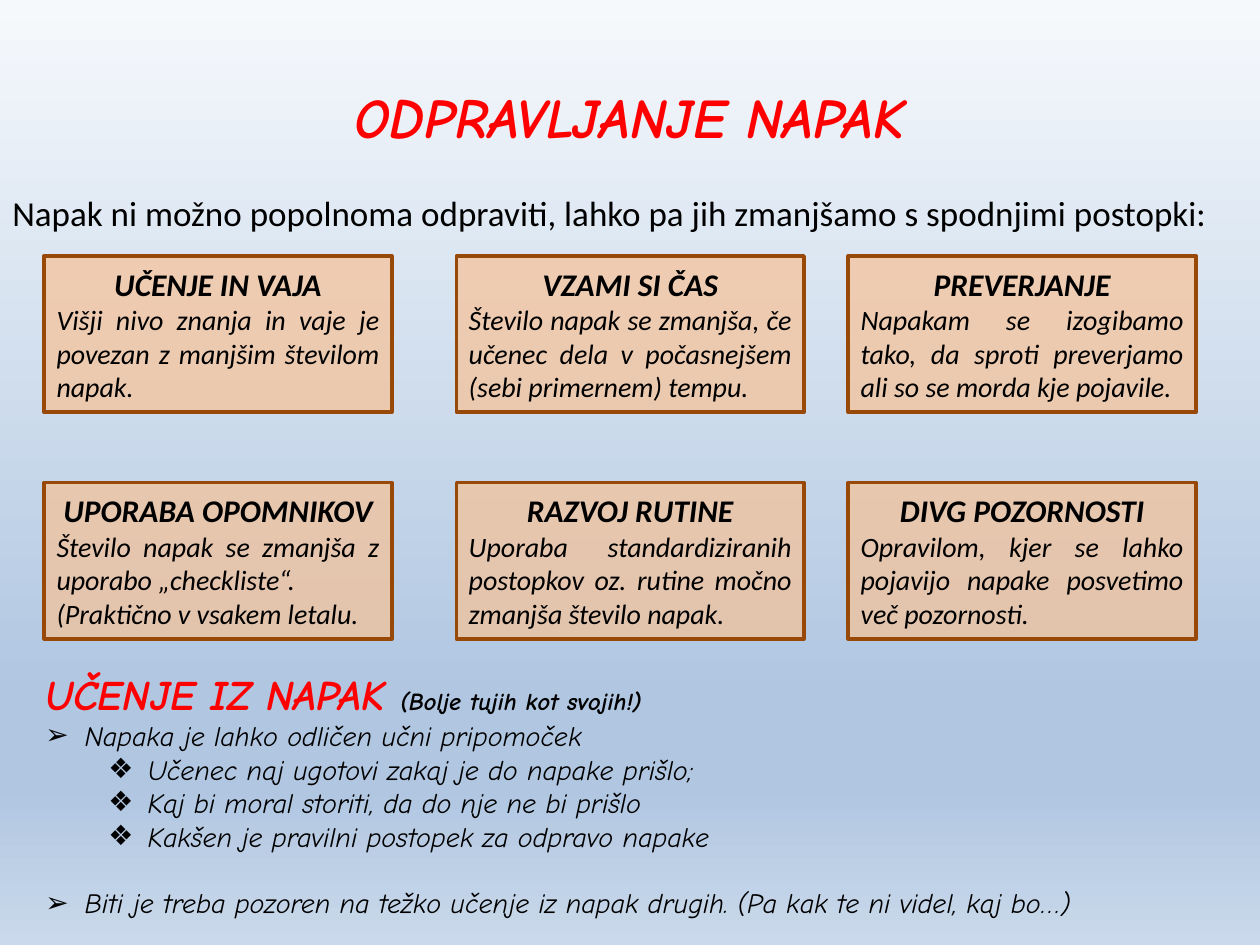
import pptx
import pptx.dml.color
import pptx.enum.shapes
import pptx.enum.text
import pptx.oxml
import pptx.oxml.ns
import pptx.util

Cm = pptx.util.Cm
Pt = pptx.util.Pt
qn = pptx.oxml.ns.qn
Align = pptx.enum.text.PP_ALIGN
Anchor = pptx.enum.text.MSO_ANCHOR

COLUMNS = [0.89, 9.2, 17.1]
ROWS = [5.16, 9.73]
METHODS = [
    ("UČENJE IN VAJA",
     ["Višji nivo znanja in vaje je povezan z manjšim številom napak."]),
    ("VZAMI SI ČAS",
     ["Število napak se zmanjša, če učenec dela v počasnejšem (sebi primernem) tempu."]),
    ("PREVERJANJE",
     ["Napakam se izogibamo tako, da sproti preverjamo ali so se morda kje pojavile."]),
    ("UPORABA OPOMNIKOV",
     ["Število napak se zmanjša z uporabo „checkliste“.",
      "(Praktično v vsakem letalu."]),
    ("RAZVOJ RUTINE",
     ["Uporaba standardiziranih postopkov oz. rutine močno zmanjša število napak."]),
    ("DIVG POZORNOSTI",
     ["Opravilom, kjer se lahko pojavijo napake posvetimo več pozornosti."]),
]
# Level, text, space before in points
LESSONS = [
    (0, "Napaka je lahko odličen učni pripomoček", 0),
    (1, "Učenec naj ugotovi zakaj je do napake prišlo;", 0),
    (1, "Kaj bi moral storiti, da do nje ne bi prišlo", 0),
    (1, "Kakšen je pravilni postopek za odpravo napake", 0),
    (0, "Biti je treba pozoren na težko učenje iz napak drugih. "
        "(Pa kak te ni videl, kaj bo…)", 19),
]


def color(text):
    return pptx.dml.color.RGBColor.from_string(text)


def add_child(parent, tag, **attributes):
    child = pptx.oxml.parse_xml(
        f'<{tag} xmlns:a="http://schemas.openxmlformats.org/drawingml/2006/main"/>')
    for name, value in attributes.items():
        child.set(name, str(value))
    parent.append(child)
    return child


class Painter:
    plain_font = "Calibri"
    hand_font = "Comic Neue"
    black, red = "000000", "FF0000"
    box_fill, box_line = "FAC090", "984807"
    bullets = ["➢", "❖"]
    indents = [0.79, 2.06]

    def __init__(self, page):
        self.page = page

    def background(self, stops):
        fill = self.page.background.fill
        fill.gradient()
        fill.gradient_angle = 270
        stop_list = self.page.element.find(".//" + qn("a:gsLst"))
        for stop in list(stop_list):
            stop_list.remove(stop)
        for position, value in stops:
            stop = add_child(stop_list, "a:gs", pos=position * 1000)
            add_child(stop, "a:srgbClr", val=value)

    def place(self, box, left, top, width, height):
        box.left, box.top = Cm(left), Cm(top)
        box.width, box.height = Cm(width), Cm(height)

    def span(self, para, text, size, font, ink=black, bold=False, italic=True):
        span = para.add_run()
        span.text = text
        span.font.name, span.font.size = font, Pt(size)
        span.font.bold, span.font.italic = bold, italic
        span.font.color.rgb = color(ink)

    def title(self, text):
        box = self.page.shapes.title
        self.place(box, 1.27, 0.76, 22.86, 3.18)
        box.text_frame.vertical_anchor = Anchor.MIDDLE
        para = box.text_frame.paragraphs[0]
        para.alignment = Align.CENTER
        self.span(para, text, 32, self.hand_font, self.red, bold=True)

    def intro(self, text):
        box = self.page.shapes.add_textbox(0, Cm(3.73), Cm(25.4), Cm(1.12))
        box.text_frame.word_wrap = True
        self.span(box.text_frame.paragraphs[0], text, 20, self.plain_font, italic=False)

    def card(self, left, top, heading, lines):
        box = self.page.shapes.add_shape(
            pptx.enum.shapes.MSO_SHAPE.RECTANGLE, Cm(left), Cm(top), Cm(7.01), Cm(3.15))
        box.shadow.inherit = False
        box.fill.solid()
        box.fill.fore_color.rgb = color(self.box_fill)
        fill_color = box.element.spPr.find(qn("a:solidFill")).find(qn("a:srgbClr"))
        add_child(fill_color, "a:alpha", val=66000)
        box.line.color.rgb = color(self.box_line)
        box.line.width = Pt(2)
        frame = box.text_frame
        frame.word_wrap = True
        frame.vertical_anchor = Anchor.MIDDLE
        para = frame.paragraphs[0]
        para.alignment = Align.CENTER
        self.span(para, heading, 18, self.plain_font, bold=True)
        for line in lines:
            para = frame.add_paragraph()
            para.alignment = Align.JUSTIFY
            self.span(para, line, 16, self.plain_font)

    def lessons(self, heading, remark, items):
        box = self.page.placeholders[1]
        self.place(box, 0.66, 13.34, 23.19, 5.38)
        frame = box.text_frame
        frame.auto_size = pptx.enum.text.MSO_AUTO_SIZE.NONE
        para = frame.paragraphs[0]
        self.list_format(para, 0, 0, None)
        self.span(para, heading, 24, self.hand_font, self.red, bold=True)
        self.span(para, remark, 14, self.hand_font, bold=True)
        for level, text, gap in items:
            para = frame.add_paragraph()
            para.level = level
            self.list_format(para, self.indents[level], gap, self.bullets[level])
            self.span(para, text, 16, self.hand_font)

    def list_format(self, para, indent, gap, bullet):
        para.space_before, para.space_after = Pt(gap), Pt(0)
        properties = para._p.get_or_add_pPr()
        properties.set("marL", str(Cm(indent)))
        properties.set("indent", str(-Cm(0.79) if bullet else 0))
        if bullet:
            add_child(properties, "a:buChar", char=bullet)
        else:
            add_child(properties, "a:buNone")


def main():
    deck = pptx.Presentation()
    deck.slide_width, deck.slide_height = Cm(25.4), Cm(19.05)
    painter = Painter(deck.slides.add_slide(deck.slide_layouts[1]))
    painter.background([(0, "F6F9FC"), (74, "B0C6E1"), (83, "B0C6E1"), (100, "CAD9EB")])
    painter.title("ODPRAVLJANJE NAPAK")
    painter.intro("Napak ni možno popolnoma odpraviti, lahko pa jih zmanjšamo "
                  "s spodnjimi postopki:")
    for index, (heading, lines) in enumerate(METHODS):
        row, column = divmod(index, len(COLUMNS))
        painter.card(COLUMNS[column], ROWS[row], heading, lines)
    painter.lessons("UČENJE IZ NAPAK ", "(Bolje tujih kot svojih!)", LESSONS)
    deck.save("out.pptx")


if __name__ == "__main__":
    main()
